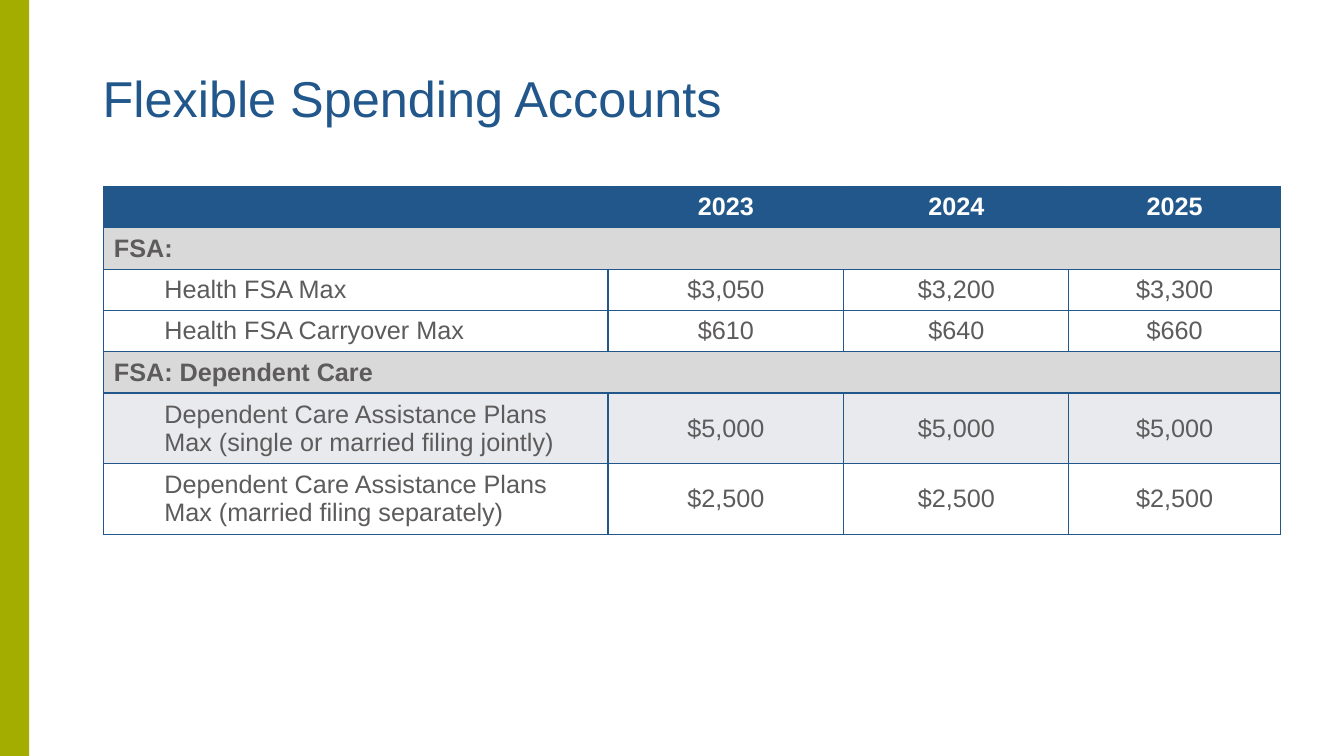
from dataclasses import dataclass

from lxml import etree
from pptx import Presentation
from pptx import util as u
from pptx.dml.color import RGBColor
from pptx.enum import shapes, text
from pptx.oxml.ns import qn


@dataclass(frozen=True)
class Theme:
    font: str = "Arial"
    title_size: int = 36
    table_size: int = 18
    blue: str = "21578A"
    green: str = "A2AD00"
    gray: str = "5D5B5B"
    white: str = "FFFFFF"
    section: str = "D9D9D9"
    band: str = "E8EAED"
    border_width: float = 1


def paint(fill, color):
    fill.solid()
    fill.fore_color.rgb = RGBColor.from_string(color)


def write(frame, wording, *, font, size, color, bold=False, align=text.PP_ALIGN.LEFT,
          spacing=None, indent=0):
    """Put one formatted paragraph into a text frame."""
    paragraph = frame.paragraphs[0]
    paragraph.alignment = align
    if spacing:
        paragraph.line_spacing = spacing
    if indent:
        paragraph.level = 1
        properties = paragraph._p.get_or_add_pPr()
        properties.set("marL", str(u.Inches(indent)))
        properties.set("indent", "0")
    run = paragraph.add_run()
    run.text = wording
    run.font.name = font
    run.font.size = u.Pt(size)
    run.font.bold = bold
    run.font.color.rgb = RGBColor.from_string(color)


class SlideBuilder:
    def __init__(self, slide, theme):
        self.slide = slide
        self.theme = theme

    def bar(self, left, top, width, height):
        stripe = self.slide.shapes.add_shape(
            shapes.MSO_SHAPE.RECTANGLE, *map(u.Inches, (left, top, width, height)))
        stripe.shadow.inherit = False
        paint(stripe.fill, self.theme.green)
        stripe.line.fill.background()

    def title(self, wording, left, top, width, height):
        heading = self.slide.shapes.add_textbox(*map(u.Inches, (left, top, width, height)))
        frame = heading.text_frame
        frame.word_wrap = True
        frame.vertical_anchor = text.MSO_ANCHOR.MIDDLE
        write(frame, wording, font=self.theme.font, size=self.theme.title_size,
              color=self.theme.blue, spacing=0.9)

    def border(self, cell):
        properties = cell._tc.get_or_add_tcPr()
        for position, side in enumerate(("a:lnL", "a:lnR", "a:lnT", "a:lnB")):
            line = etree.Element(qn(side), w=str(u.Pt(self.theme.border_width)))
            solid = etree.SubElement(line, qn("a:solidFill"))
            etree.SubElement(solid, qn("a:srgbClr"), val=self.theme.blue)
            properties.insert(position, line)

    def cell(self, cell, wording, fill, **style):
        paint(cell.fill, fill)
        self.border(cell)
        cell.vertical_anchor = text.MSO_ANCHOR.MIDDLE
        if wording:
            write(cell.text_frame, wording, font=self.theme.font,
                  size=self.theme.table_size, **style)

    def limits_table(self, rows, left, top, widths, heights):
        theme = self.theme
        limits = self.slide.shapes.add_table(
            len(rows), len(widths), u.Inches(left), u.Inches(top),
            u.Inches(sum(widths)), u.Inches(sum(heights))).table
        for column, width in zip(limits.columns, widths):
            column.width = u.Inches(width)
        for row, height in zip(limits.rows, heights):
            row.height = u.Inches(height)

        # Each row kind has its own text colour and weight
        styles = {"header": (theme.white, True), "section": (theme.gray, True),
                  "plan": (theme.gray, False)}
        for r, (kind, fill, label, *amounts) in enumerate(rows):
            color, bold = styles[kind]
            for c, wording in enumerate([label, *amounts] if amounts else [label, "", "", ""]):
                self.cell(limits.cell(r, c), wording, fill, color=color, bold=bold,
                          align=text.PP_ALIGN.CENTER if c else text.PP_ALIGN.LEFT,
                          indent=0.5 if kind == "plan" and c == 0 else 0)
            if kind == "section":
                limits.cell(r, 0).merge(limits.cell(r, len(widths) - 1))


def main():
    deck = Presentation()
    deck.slide_width, deck.slide_height = u.Inches(13.33), u.Inches(7.5)
    theme = Theme()
    builder = SlideBuilder(deck.slides.add_slide(deck.slide_layouts[6]), theme)

    # Side stripe and title
    builder.bar(0, 0, 0.29, 7.5)
    builder.title("Flexible Spending Accounts", 0.92, 0.16, 11.5, 1.69)

    # Contribution limits by year
    rows = [
        ("header", theme.blue, "", "2023", "2024", "2025"),
        ("section", theme.section, "FSA:"),
        ("plan", theme.white, "Health FSA Max", "$3,050", "$3,200", "$3,300"),
        ("plan", theme.white, "Health FSA Carryover Max", "$610", "$640", "$660"),
        ("section", theme.section, "FSA: Dependent Care"),
        ("plan", theme.band,
         "Dependent Care Assistance Plans Max (single or married filing jointly)",
         "$5,000", "$5,000", "$5,000"),
        ("plan", theme.white,
         "Dependent Care Assistance Plans Max (married filing separately)",
         "$2,500", "$2,500", "$2,500"),
    ]
    builder.limits_table(rows, 1.03, 1.85, widths=[5, 2.34, 2.23, 2.1],
                         heights=[0.41] * 5 + [0.66] * 2)

    deck.save("out.pptx")


if __name__ == "__main__":
    main()
